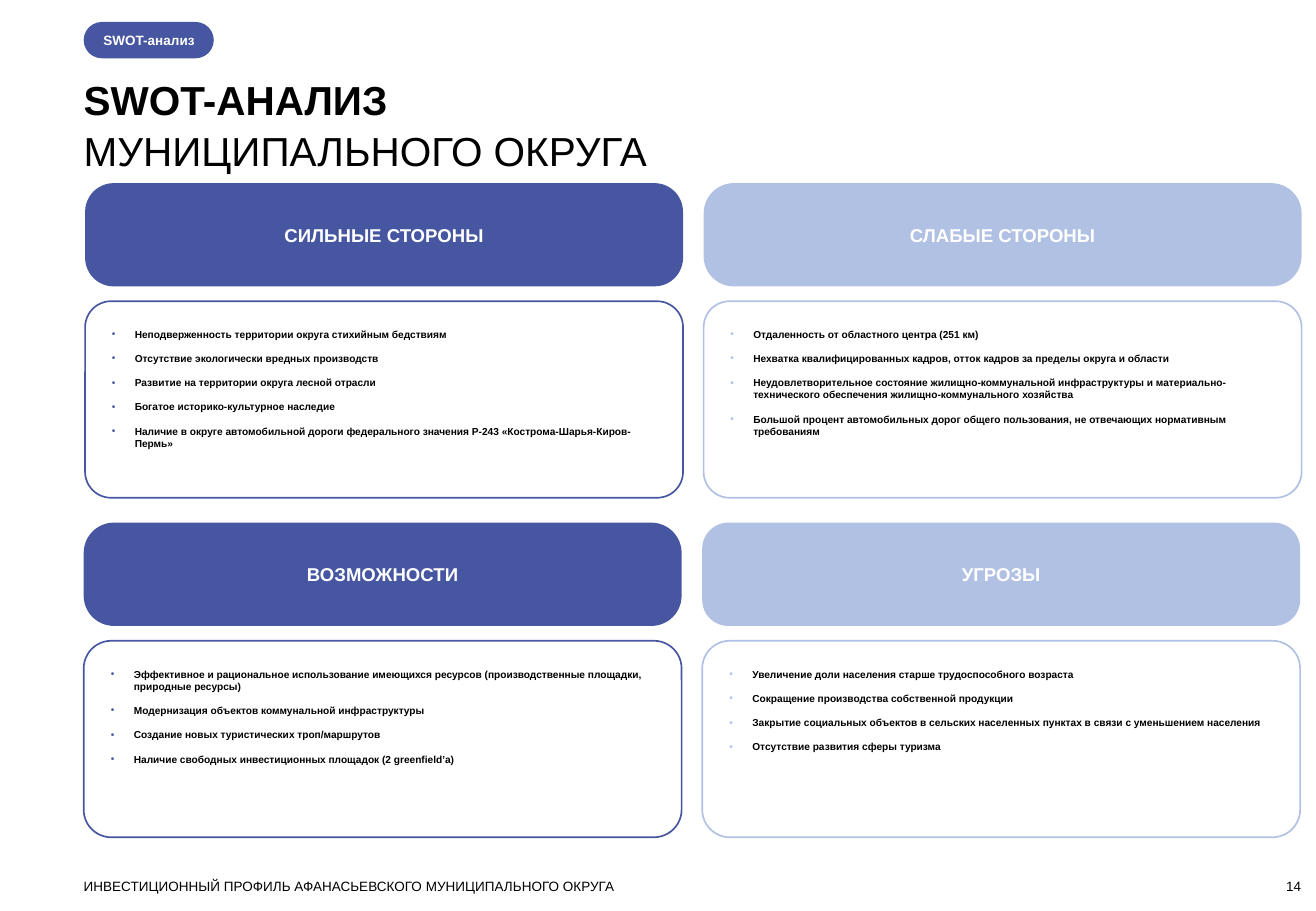
from pptx import Presentation
from pptx import util as u
from pptx.dml import color
from pptx.enum import shapes, text
from pptx.oxml import xmlchemy
from pptx.oxml import ns
from lxml import etree

DARK, LIGHT, WHITE, BLACK = "4756A0", "B1C1E4", "FFFFFF", "000000"
LEFT, TOP = 1.75, 3.83
COLUMN_STEP, ROW_STEP = 12.93, 7.1
CARD_WIDTH, HEADER_HEIGHT, PANEL_HEIGHT, PANEL_OFFSET = 12.5, 2.16, 4.11, 2.47

STRENGTHS = [
    "Неподверженность территории округа стихийным бедствиям",
    "Отсутствие экологически вредных производств",
    "Развитие на территории округа лесной отрасли",
    "Богатое историко-культурное наследие",
    "Наличие в округе автомобильной дороги федерального значения Р-243 «Кострома-Шарья-Киров-Пермь»",
]
WEAKNESSES = [
    "Отдаленность от областного центра (251 км)",
    "Нехватка квалифицированных кадров, отток кадров за пределы округа и области",
    "Неудовлетворительное состояние жилищно-коммунальной инфраструктуры и "
    "материально-технического обеспечения жилищно-коммунального хозяйства",
    "Большой процент автомобильных дорог общего пользования, не отвечающих нормативным требованиям",
]
OPPORTUNITIES = [
    "Эффективное и рациональное использование имеющихся ресурсов "
    "(производственные площадки, природные ресурсы)",
    "Модернизация объектов коммунальной инфраструктуры",
    "Создание новых туристических троп/маршрутов",
    "Наличие свободных инвестиционных площадок (2 greenfield’а)",
]
THREATS = [
    "Увеличение доли населения старше трудоспособного возраста",
    "Сокращение производства собственной продукции",
    "Закрытие социальных объектов в сельских населенных пунктах в связи с уменьшением населения",
    "Отсутствие развития сферы туризма",
]
QUADRANTS = [
    [("СИЛЬНЫЕ СТОРОНЫ", STRENGTHS, 0.277), ("СЛАБЫЕ СТОРОНЫ", WEAKNESSES, 0.293)],
    [("ВОЗМОЖНОСТИ", OPPORTUNITIES, 0.293), ("УГРОЗЫ", THREATS, 0.252)],
]


def rgb(value):
    """Return the colour for a hex string."""
    return color.RGBColor.from_string(value)


def prepare_frame(box, insets, anchor=text.MSO_ANCHOR.TOP):
    """Set wrapping, insets in centimetres and the vertical anchor."""
    frame = box.text_frame
    frame.word_wrap = True
    frame.vertical_anchor = anchor
    frame.margin_left, frame.margin_top, frame.margin_right, frame.margin_bottom = map(u.Cm, insets)


def write(box, words, index=0, size=8, ink=BLACK, bold=False,
          align=text.PP_ALIGN.LEFT, spacing=None, after=0):
    """Write one formatted paragraph and return it."""
    frame = box.text_frame
    para = frame.paragraphs[0] if index == 0 else frame.add_paragraph()
    para.alignment = align
    para.line_spacing = spacing
    para.space_after = u.Pt(after)
    span = para.add_run()
    span.text = words
    span.font.name = "Arial"
    span.font.size = u.Pt(size)
    span.font.bold = bold
    span.font.color.rgb = rgb(ink)
    return para


def add_bullet(para, ink):
    """Give a paragraph a hanging coloured bullet."""
    settings = para._p.get_or_add_pPr()
    settings.set("marL", str(u.Cm(0.48)))
    settings.set("indent", str(-u.Cm(0.48)))
    tint = etree.SubElement(settings, ns.qn("a:buClr"))
    etree.SubElement(tint, ns.qn("a:srgbClr"), val=ink)
    etree.SubElement(settings, ns.qn("a:buFont"), typeface="Arial")
    etree.SubElement(settings, ns.qn("a:buChar"), char="•")


def add_rounded(page, left, top, width, height, corner, fill=None, line=None):
    """Add a rounded rectangle with a fill or an outline."""
    kind = shapes.MSO_SHAPE.ROUNDED_RECTANGLE
    box = page.shapes.add_shape(kind, *map(u.Cm, (left, top, width, height)))
    box.adjustments[0] = corner
    box.shadow.inherit = False
    if fill:
        box.fill.solid()
        box.fill.fore_color.rgb = rgb(fill)
    else:
        box.fill.background()
    if line:
        box.line.color.rgb = rgb(line)
        box.line.width = u.Pt(1)
    else:
        box.line.fill.background()
    return box


def add_label(page, left, top, width, height):
    """Add an empty text box without insets."""
    box = page.shapes.add_textbox(*map(u.Cm, (left, top, width, height)))
    prepare_frame(box, (0, 0, 0, 0))
    return box


def add_quadrant(page, row, column, heading, points, header_corner):
    """Add a header and its bulleted panel at a grid position."""
    ink = (DARK, LIGHT)[column]
    left = LEFT + column * COLUMN_STEP + (0.03 if row == 0 else 0)
    top = TOP + row * ROW_STEP
    header = add_rounded(page, left, top, CARD_WIDTH, HEADER_HEIGHT, header_corner, fill=ink)
    prepare_frame(header, (0.25, 0.13, 0.25, 0.13), text.MSO_ANCHOR.MIDDLE)
    write(header, heading, size=11, ink=WHITE, bold=True, align=text.PP_ALIGN.CENTER)

    panel_corner = (0.132, 0.141)[row]
    panel = add_rounded(page, left, top + PANEL_OFFSET, CARD_WIDTH, PANEL_HEIGHT,
                        panel_corner, line=ink)
    prepare_frame(panel, (0.4, 0.4, (0.4, 0.25)[column], 0.13))
    for index, point in enumerate(points):
        para = write(panel, point, index, size=6, bold=True, after=7.2)
        add_bullet(para, ink)


def main():
    """Build the SWOT slide and save it."""
    deck = Presentation()
    deck.slide_width, deck.slide_height = u.Cm(27.51), u.Cm(19.05)
    page = deck.slides.add_slide(deck.slide_layouts[6])

    tag = add_rounded(page, LEFT, 0.46, 2.72, 0.76, 0.5, fill=DARK)
    prepare_frame(tag, (0.3, 0, 0, 0), text.MSO_ANCHOR.MIDDLE)
    write(tag, "SWOT-анализ", ink=WHITE, bold=True)

    title = add_label(page, LEFT, 1.52, 25.45, 2.06)
    write(title, "SWOT-АНАЛИЗ", size=24, bold=True, spacing=1.05)
    write(title, "МУНИЦИПАЛЬНОГО ОКРУГА", 1, size=24, spacing=1.05)

    for row, quadrants in enumerate(QUADRANTS):
        for column, quadrant in enumerate(quadrants):
            add_quadrant(page, row, column, *quadrant)

    footer = add_label(page, LEFT, 18.36, 20.32, 0.33)
    write(footer, "ИНВЕСТИЦИОННЫЙ ПРОФИЛЬ АФАНАСЬЕВСКОГО МУНИЦИПАЛЬНОГО ОКРУГА")
    number = add_label(page, 25.17, 18.36, 2.03, 0.33)
    write(number, "14", align=text.PP_ALIGN.RIGHT)

    deck.save("out.pptx")


if __name__ == "__main__":
    main()
